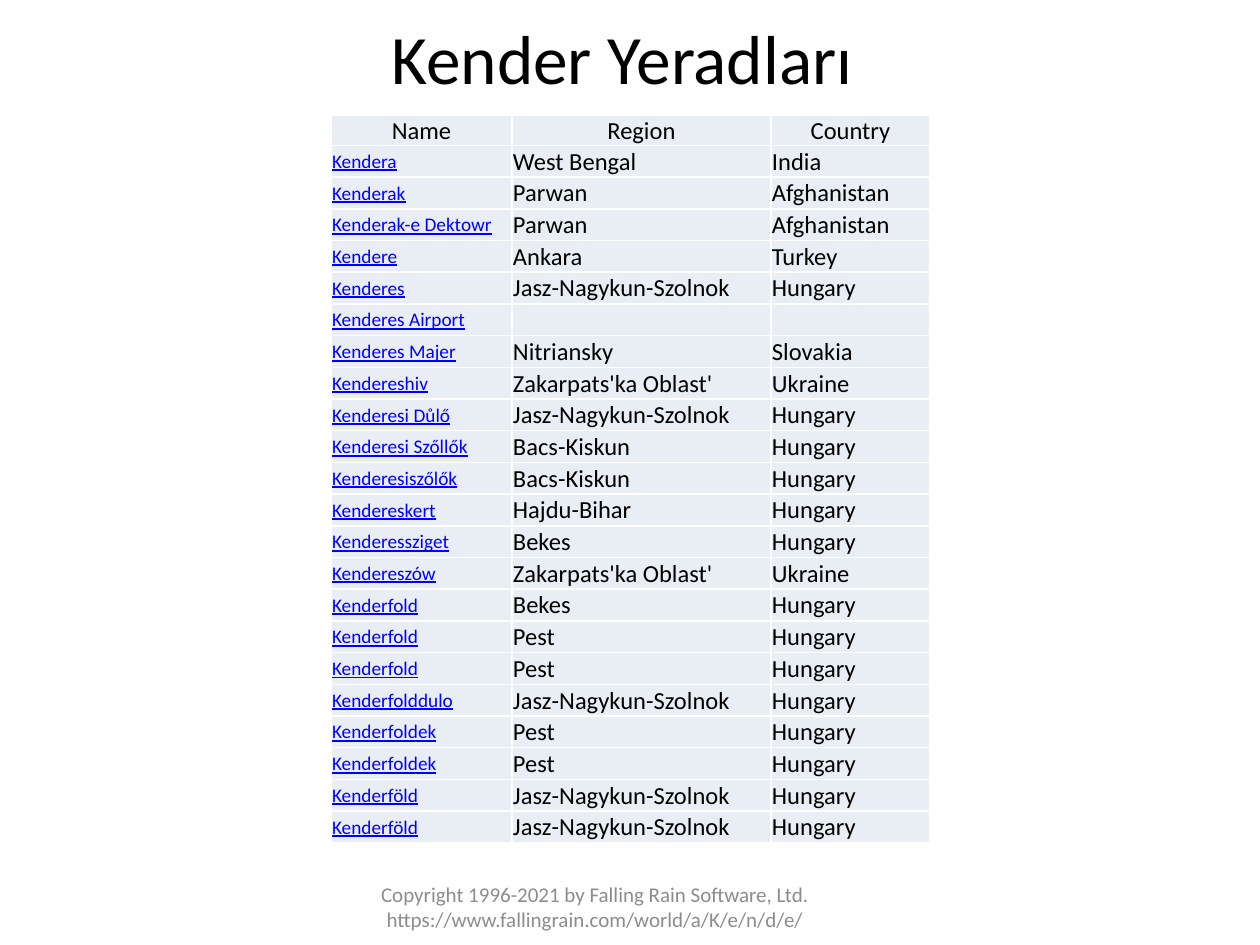
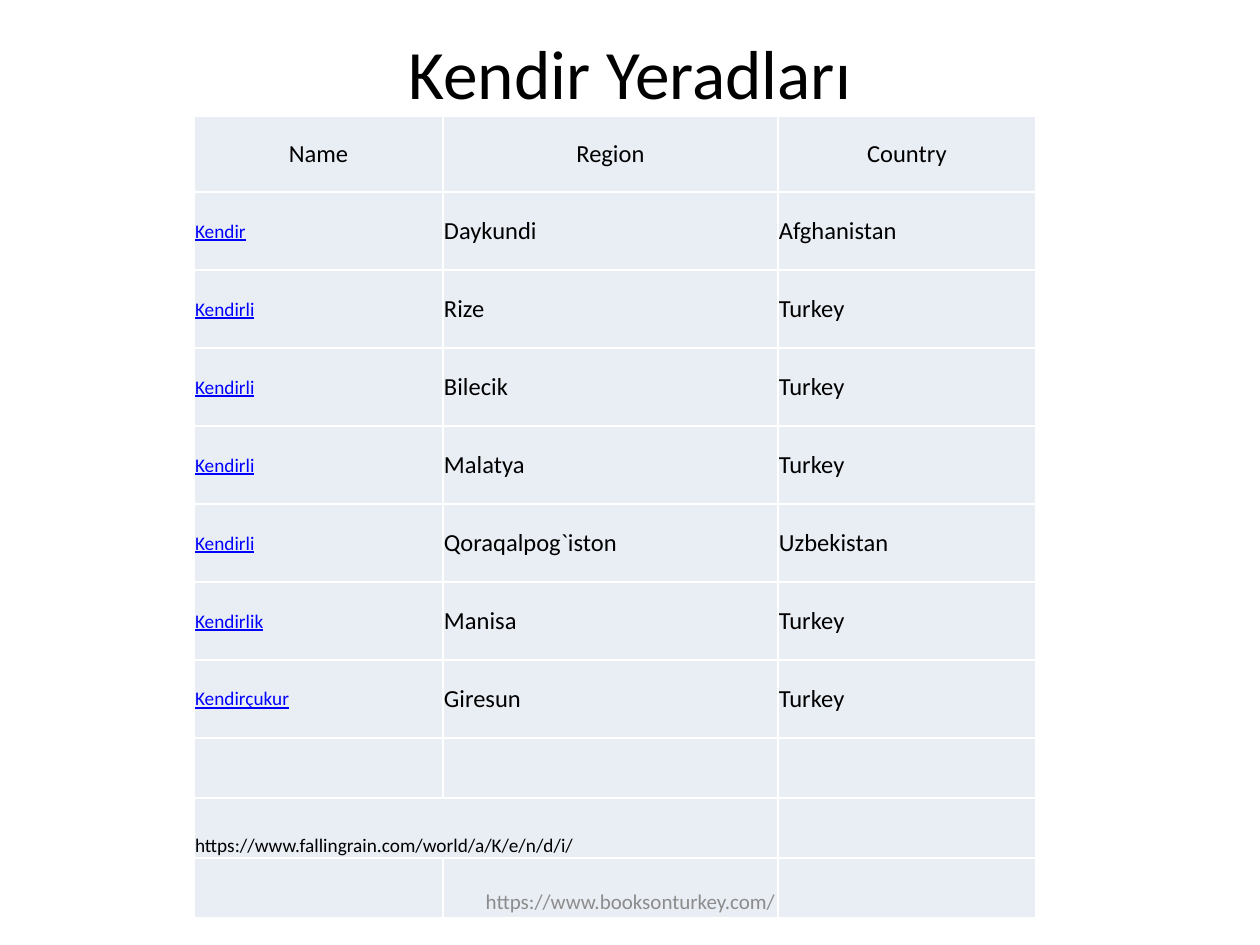
from lxml import etree
from pptx import Presentation, util as u
from pptx.dml.color import RGBColor
from pptx.enum import text
from pptx.oxml.ns import qn

PX_PER_INCH = 126
FONT = "Calibri"
COLORS = {"ink": "000000", "link": "0000FF", "footer": "8C8C8C",
          "cell": "E9EDF4", "border": "FFFFFF"}
HEADINGS = ("Name", "Region", "Country")
TITLE_SIZE, BODY_SIZE, NAME_SIZE, FOOTER_SIZE = 39.6, 14, 11, 12
ALIGN, ANCHOR = text.PP_ALIGN, text.MSO_ANCHOR

KENDER_PLACES = [
    ("Kendera", "West Bengal", "India"),
    ("Kenderak", "Parwan", "Afghanistan"),
    ("Kenderak-e Dektowr", "Parwan", "Afghanistan"),
    ("Kendere", "Ankara", "Turkey"),
    ("Kenderes", "Jasz-Nagykun-Szolnok", "Hungary"),
    ("Kenderes Airport", "", ""),
    ("Kenderes Majer", "Nitriansky", "Slovakia"),
    ("Kendereshiv", "Zakarpats'ka Oblast'", "Ukraine"),
    ("Kenderesi Důlő", "Jasz-Nagykun-Szolnok", "Hungary"),
    ("Kenderesi Szőllők", "Bacs-Kiskun", "Hungary"),
    ("Kenderesiszőlők", "Bacs-Kiskun", "Hungary"),
    ("Kendereskert", "Hajdu-Bihar", "Hungary"),
    ("Kenderessziget", "Bekes", "Hungary"),
    ("Kendereszów", "Zakarpats'ka Oblast'", "Ukraine"),
    ("Kenderfold", "Bekes", "Hungary"),
    ("Kenderfold", "Pest", "Hungary"),
    ("Kenderfold", "Pest", "Hungary"),
    ("Kenderfolddulo", "Jasz-Nagykun-Szolnok", "Hungary"),
    ("Kenderfoldek", "Pest", "Hungary"),
    ("Kenderfoldek", "Pest", "Hungary"),
    ("Kenderföld", "Jasz-Nagykun-Szolnok", "Hungary"),
    ("Kenderföld", "Jasz-Nagykun-Szolnok", "Hungary"),
]
KENDIR_PLACES = [
    ("Kendir", "Daykundi", "Afghanistan"),
    ("Kendirli", "Rize", "Turkey"),
    ("Kendirli", "Bilecik", "Turkey"),
    ("Kendirli", "Malatya", "Turkey"),
    ("Kendirli", "Qoraqalpog`iston", "Uzbekistan"),
    ("Kendirlik", "Manisa", "Turkey"),
    ("Kendirçukur", "Giresun", "Turkey"),
]
BLANK_ROW = ("", "", "")


def px(length):
    return u.Emu(round(length * 914400 / PX_PER_INCH))


def add_run(paragraph, wording, size, color, underline=False):
    run = paragraph.add_run()
    run.text = wording
    run.font.name = FONT
    run.font.size = u.Pt(size)
    run.font.underline = underline
    run.font.color.rgb = RGBColor.from_string(COLORS[color])


def place(shape, box):
    shape.left, shape.top, shape.width, shape.height = map(px, box)


def add_titled_slide(deck, wording, box):
    slide = deck.slides.add_slide(deck.slide_layouts[5])
    title = slide.shapes.title
    place(title, box)
    frame = title.text_frame
    frame.word_wrap = True
    frame.auto_size = text.MSO_AUTO_SIZE.NONE
    frame.vertical_anchor = ANCHOR.MIDDLE
    frame.paragraphs[0].alignment = ALIGN.CENTER
    add_run(frame.paragraphs[0], wording, TITLE_SIZE, "ink")
    return slide


def add_footer(slide, lines, box, anchor):
    frame = slide.shapes.add_textbox(*map(px, box)).text_frame
    frame.word_wrap = True
    frame.vertical_anchor = anchor
    frame.margin_top = frame.margin_bottom = 0
    for index, line in enumerate(lines):
        paragraph = frame.add_paragraph() if index else frame.paragraphs[0]
        paragraph.alignment = ALIGN.CENTER
        add_run(paragraph, line, FOOTER_SIZE, "footer")


def style_cell(cell):
    properties = cell._tc.get_or_add_tcPr()
    for side in ("lnL", "lnR", "lnT", "lnB"):
        line = etree.SubElement(properties, qn(f"a:{side}"), w=str(u.Pt(1)))
        fill = etree.SubElement(line, qn("a:solidFill"))
        etree.SubElement(fill, qn("a:srgbClr"), val=COLORS["border"])
    cell.fill.solid()
    cell.fill.fore_color.rgb = RGBColor.from_string(COLORS["cell"])
    cell.margin_left = cell.margin_right = cell.margin_top = px(1)
    cell.margin_bottom = 0
    cell.vertical_anchor = ANCHOR.MIDDLE


def fill_cell(cell, wording, is_heading, is_name):
    paragraph = cell.text_frame.paragraphs[0]
    if not wording:
        paragraph._p.get_or_add_endParaRPr().set("sz", str(BODY_SIZE * 100))
    elif is_heading:
        paragraph.alignment = ALIGN.CENTER
        add_run(paragraph, wording, BODY_SIZE, "ink")
    elif is_name:
        add_run(paragraph, wording, NAME_SIZE, "link", underline=True)
    else:
        add_run(paragraph, wording, BODY_SIZE, "ink")


def add_place_table(slide, places, left, top, widths, heights):
    rows = [HEADINGS, *places]
    frame = slide.shapes.add_table(len(rows), len(HEADINGS), px(left), px(top),
                                   px(sum(widths)), px(sum(heights)))
    table = frame.table
    table.first_row = table.horz_banding = False
    for column, width in zip(table.columns, widths):
        column.width = px(width)
    for row_index, (row, height) in enumerate(zip(rows, heights)):
        table.rows[row_index].height = px(height)
        for column_index, wording in enumerate(row):
            cell = table.cell(row_index, column_index)
            style_cell(cell)
            fill_cell(cell, wording, row_index == 0, column_index == 0)
    return table


def add_source_row(table, row_index, address):
    source = table.cell(row_index, 0)
    source.merge(table.cell(row_index, 1))
    source.vertical_anchor = ANCHOR.BOTTOM
    add_run(source.text_frame.paragraphs[0], address, NAME_SIZE, "ink")


def main():
    deck = Presentation()
    deck.slide_width, deck.slide_height = px(1260), px(945)

    kender = add_titled_slide(deck, "Kender Yeradları ", (63, 38, 1134, 38))
    add_footer(kender, ["Copyright 1996-2021 by Falling Rain Software, Ltd.",
                        "https://www.fallingrain.com/world/a/K/e/n/d/e/"],
               (134, 908, 922, 24), ANCHOR.BOTTOM)
    count = len(KENDER_PLACES)
    add_place_table(kender, KENDER_PLACES, 331, 115, (181, 259, 159),
                    [30] + [698 / count] * count)

    kendir = add_titled_slide(deck, "Kendir Yeradları", (63, 38, 1134, 68))
    closing_rows = [BLANK_ROW] * 3
    table = add_place_table(kendir, KENDIR_PLACES + closing_rows, 194, 116,
                            (249, 335, 258),
                            [76] + [78] * len(KENDIR_PLACES) + [60] * len(closing_rows))
    add_source_row(table, len(KENDIR_PLACES) + 2,
                   "https://www.fallingrain.com/world/a/K/e/n/d/i/")
    add_footer(kendir, ["https://www.booksonturkey.com/"],
               (431, 876, 399, 50), ANCHOR.MIDDLE)

    deck.save("out.pptx")


if __name__ == "__main__":
    main()
